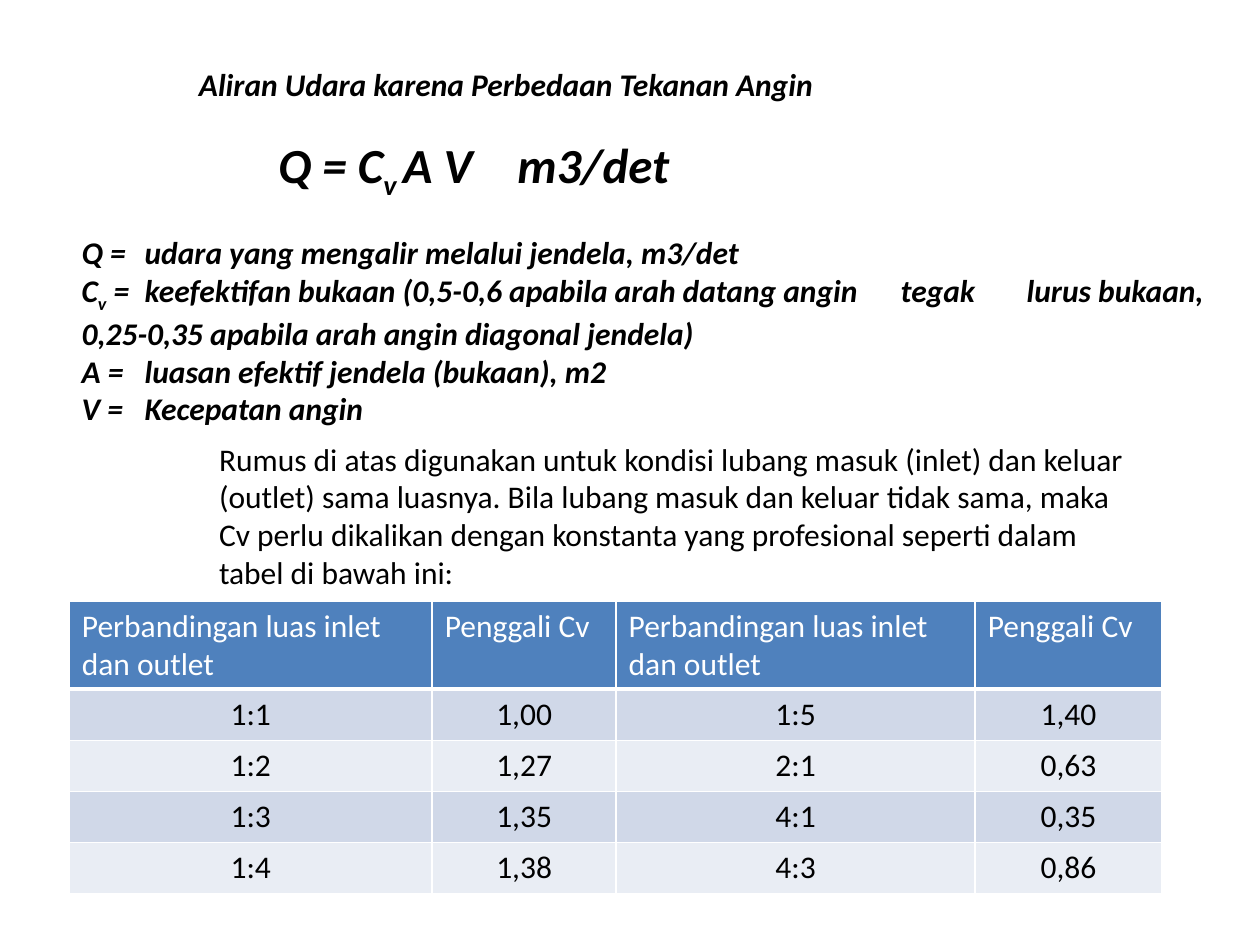
from lxml.etree import SubElement
from pptx import Presentation
from pptx.dml.color import RGBColor
from pptx.enum.text import MSO_AUTO_SIZE as AutoSize, PP_ALIGN as Align
from pptx.oxml.ns import qn
from pptx.util import Pt

FONT = "Calibri"
COLORS = {
    "text": "000000",
    "white": "FFFFFF",
    "header": "4F81BD",
    "odd": "D0D8E8",
    "even": "E9EDF4",
}
DEFINITIONS = [
    ["Q =\tudara yang mengalir melalui jendela, m3/det"],
    ["C", "v", " =\tkeefektifan bukaan (0,5-0,6 apabila arah datang angin\ttegak\tlurus "
     "bukaan, 0,25-0,35 apabila arah angin diagonal jendela)"],
    ["A =\tluasan efektif jendela (bukaan), m2"],
    ["V =\tKecepatan angin"],
]
EXPLANATION = (
    "Rumus di atas digunakan untuk kondisi lubang masuk (inlet) dan keluar (outlet) "
    "sama luasnya. Bila lubang masuk dan keluar tidak sama, maka Cv perlu dikalikan "
    "dengan konstanta yang profesional seperti dalam tabel di bawah ini:"
)
HEADINGS = ["Perbandingan luas inlet dan outlet", "Penggali Cv"] * 2
MULTIPLIERS = [
    ["1:1", "1,00", "1:5", "1,40"],
    ["1:2", "1,27", "2:1", "0,63"],
    ["1:3", "1,35", "4:1", "0,35"],
    ["1:4", "1,38", "4:3", "0,86"],
]
COLUMN_WIDTHS = [207.4, 105.1, 205.2, 106.6]
HEADER_HEIGHT = 50
ROW_HEIGHT = 29.2


def rgb(name):
    return RGBColor.from_string(COLORS[name])


def style(span, size=18, color="text", strong=False):
    span.font.name = FONT
    span.font.size = Pt(size)
    span.font.bold = strong
    span.font.italic = strong
    span.font.color.rgb = rgb(color)


def add_text(page, area, lines, size=18, strong=True, wrap=True):
    box = page.shapes.add_textbox(*map(Pt, area))
    frame = box.text_frame
    frame.word_wrap = wrap
    frame.auto_size = AutoSize.SHAPE_TO_FIT_TEXT
    for index, parts in enumerate(lines):
        para = frame.add_paragraph() if index else frame.paragraphs[0]
        for position, part in enumerate(parts):
            span = para.add_run()
            span.text = part
            style(span, size, strong=strong)
            if position == 1:
                span._r.get_or_add_rPr().set("baseline", "-25000")
    return box


def add_formula(page, area):
    box = add_text(page, area, [["Q = C", "v ", "A V\tm3/det"]], size=28, wrap=False)
    properties = box.text_frame.paragraphs[0]._p.get_or_add_pPr()
    stops = SubElement(properties, qn("a:tabLst"))
    SubElement(stops, qn("a:tab"), pos=str(Pt(136.6)), algn="l")


def add_borders(cell, bottom):
    properties = cell._tc.get_or_add_tcPr()
    for side, width in {"L": 1, "R": 1, "T": 1, "B": bottom}.items():
        line = SubElement(properties, qn(f"a:ln{side}"), w=str(Pt(width)))
        fill = SubElement(line, qn("a:solidFill"))
        SubElement(fill, qn("a:srgbClr"), val=COLORS["white"])


def add_multiplier_table(page, left, top):
    rows = [HEADINGS] + MULTIPLIERS
    height = HEADER_HEIGHT + ROW_HEIGHT * len(MULTIPLIERS)
    table = page.shapes.add_table(
        len(rows), len(HEADINGS), Pt(left), Pt(top), Pt(sum(COLUMN_WIDTHS)), Pt(height)
    ).table
    for column, width in zip(table.columns, COLUMN_WIDTHS):
        column.width = Pt(width)
    for index, values in enumerate(rows):
        header = index == 0
        table.rows[index].height = Pt(HEADER_HEIGHT if header else ROW_HEIGHT)
        fill = "header" if header else "odd" if index % 2 else "even"
        for column, value in enumerate(values):
            cell = table.cell(index, column)
            add_borders(cell, 3 if header else 1)
            cell.fill.solid()
            cell.fill.fore_color.rgb = rgb(fill)
            cell.text_frame.text = value
            para = cell.text_frame.paragraphs[0]
            para.alignment = Align.LEFT if header else Align.CENTER
            style(para.runs[0], color="white" if header else "text")


def build_airflow_slide(page, left, top):
    add_text(page, (left + 67, top, 385.2, 28.8),
             [["Aliran Udara karena Perbedaan Tekanan Angin"]], wrap=False)
    add_formula(page, (left + 112.3, top + 39.6, 257.8, 41))
    add_text(page, (left, top + 95.8, 658.1, 131), DEFINITIONS)
    add_text(page, (left + 78.5, top + 213.9, 540, 94.3), [[EXPLANATION]], strong=False)
    add_multiplier_table(page, left, top + 309.6)


def main():
    deck = Presentation()
    deck.slide_width, deck.slide_height = Pt(720), Pt(540)
    page = deck.slides.add_slide(deck.slide_layouts[6])
    build_airflow_slide(page, 39.6, 33.8)
    deck.save("out.pptx")


if __name__ == "__main__":
    main()
